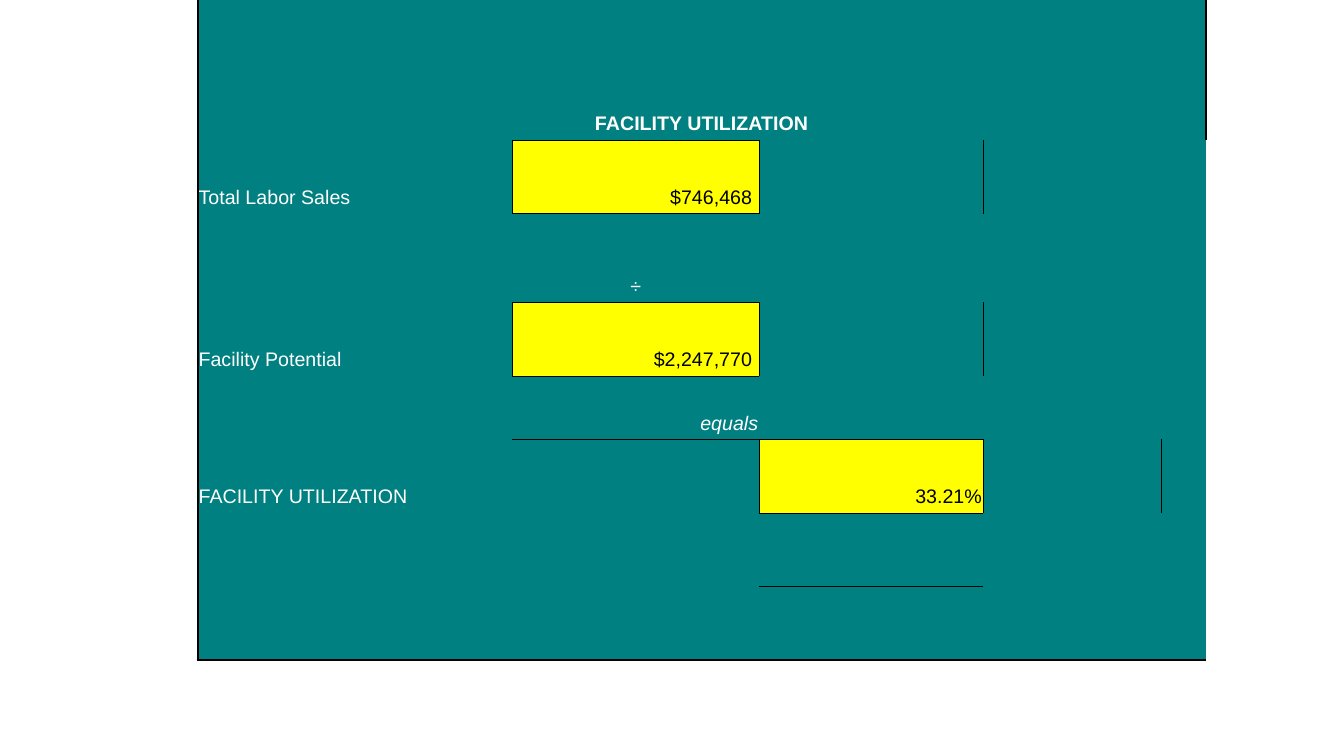
from lxml.etree import SubElement
from pptx import Presentation
from pptx.dml.color import RGBColor
from pptx.enum.text import MSO_ANCHOR, PP_ALIGN
from pptx.oxml.ns import qn
from pptx.util import Inches, Pt

TEAL, YELLOW, WHITE, BLACK = "008080", "FFFF00", "FFFFFF", "000000"
NO_GRID_STYLE = "{2D5ABB26-0587-4C30-8999-92F81FD0307C}"
LEFT, TOP = 1.96, -0.71
COLUMN_WIDTHS = [3.12, 2.45, 2.22, 1.74, 0.03, 0.44]
ROW_HEIGHTS = [2.1, 0.73, 0.88, 0.73, 0.63, 0.73, 0.73, 0.73]
THIN, THICK = 0.5, 1.5

# (row, column): (text, alignment, bold, italic)
LABELS = {
    (0, 0): ("FACILITY UTILIZATION", PP_ALIGN.CENTER, True, False),
    (1, 0): ("Total Labor Sales", PP_ALIGN.LEFT, False, False),
    (2, 1): ("÷", PP_ALIGN.CENTER, False, False),
    (3, 0): ("Facility Potential", PP_ALIGN.LEFT, False, False),
    (4, 1): ("equals", PP_ALIGN.RIGHT, False, True),
    (5, 0): ("FACILITY UTILIZATION", PP_ALIGN.LEFT, False, False),
}
# (row, column): (text, right margin)
VALUES = {
    (1, 1): ("$746,468", 0.07),
    (3, 1): ("$2,247,770", 0.07),
    (5, 2): ("33.21%", 0.01),
}


def color(hex_value):
    return RGBColor.from_string(hex_value)


def write(cell, text, alignment, font_color, bold=False, italic=False, right=0.01):
    cell.text_frame.text = text
    cell.vertical_anchor = MSO_ANCHOR.BOTTOM
    cell.margin_left = cell.margin_top = Inches(0.01)
    cell.margin_right, cell.margin_bottom = Inches(right), Inches(0.05)
    paragraph = cell.text_frame.paragraphs[0]
    paragraph.alignment = alignment
    font = paragraph.runs[0].font
    font.name, font.size = "Arial", Pt(14)
    font.bold, font.italic = bold, italic
    font.color.rgb = color(font_color)


def collect_borders():
    """Return {(row, column): {side: width in points}}."""
    last_row = len(ROW_HEIGHTS) - 1
    borders = {(row, column): {} for row in range(len(ROW_HEIGHTS))
               for column in range(len(COLUMN_WIDTHS))}
    for (row, column), sides in borders.items():
        if column == 0:
            sides["L"] = THICK
        if row == last_row:
            sides["B"] = THICK
    borders[0, 0].update(T=THICK, R=THICK)
    for row, column in VALUES:
        borders[row, column].update(L=THIN, R=THIN, T=THIN, B=THIN)
        borders[row, column - 1]["R"] = THIN
        borders[row, column + 1]["L"] = THIN
        borders[row + 1, column]["T"] = THIN
        if row > 1:
            borders[row - 1, column]["B"] = THIN
    return borders


def draw_borders(cell, sides):
    properties = cell._tc.get_or_add_tcPr()
    for side in "LRTB":
        if side in sides:
            line = SubElement(properties, qn(f"a:ln{side}"), w=str(Pt(sides[side])))
            SubElement(SubElement(line, qn("a:solidFill")), qn("a:srgbClr"), val=BLACK)


presentation = Presentation()
presentation.slide_width, presentation.slide_height = Inches(13.33), Inches(7.5)
slide = presentation.slides.add_slide(presentation.slide_layouts[6])

table = slide.shapes.add_table(
    len(ROW_HEIGHTS), len(COLUMN_WIDTHS), Inches(LEFT), Inches(TOP),
    Inches(sum(COLUMN_WIDTHS)), Inches(sum(ROW_HEIGHTS))).table
table.first_row = table.horz_banding = False
table._tbl.tblPr.find(qn("a:tableStyleId")).text = NO_GRID_STYLE
for column, width in zip(table.columns, COLUMN_WIDTHS):
    column.width = Inches(width)
for row, height in zip(table.rows, ROW_HEIGHTS):
    row.height = Inches(height)

for position, sides in collect_borders().items():
    cell = table.cell(*position)
    draw_borders(cell, sides)
    cell.fill.solid()
    cell.fill.fore_color.rgb = color(YELLOW if position in VALUES else TEAL)

table.cell(0, 0).merge(table.cell(0, len(COLUMN_WIDTHS) - 1))
for row in range(1, len(ROW_HEIGHTS)):
    table.cell(row, 3).merge(table.cell(row, 4))

for position, (text, alignment, bold, italic) in LABELS.items():
    write(table.cell(*position), text, alignment, WHITE, bold, italic)
for position, (text, right) in VALUES.items():
    write(table.cell(*position), text, PP_ALIGN.RIGHT, BLACK, right=right)

presentation.save("out.pptx")
